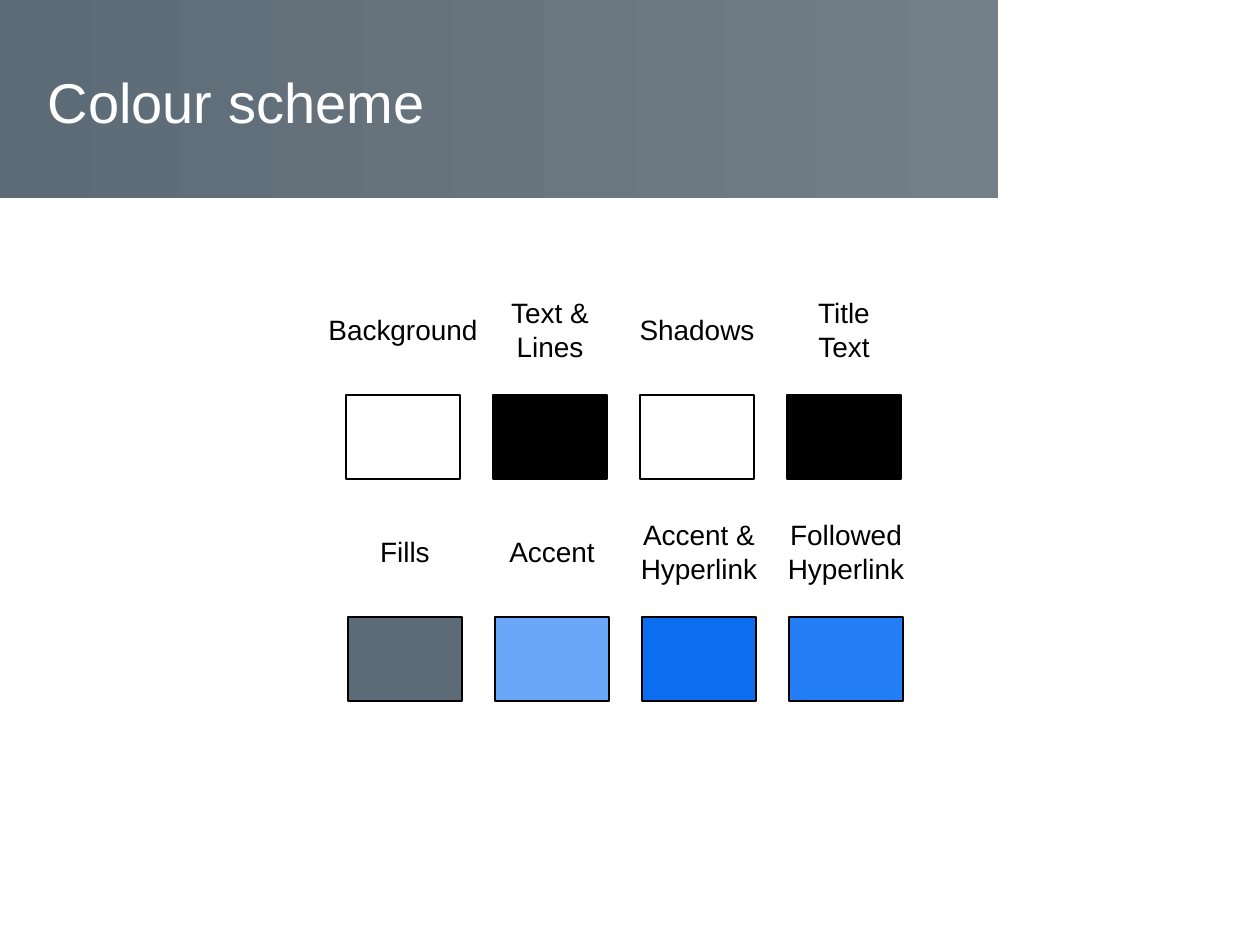
"""Builds the colour scheme slide: a title banner and two rows of labelled swatches."""
from pptx import Presentation
from pptx.dml.color import RGBColor
from pptx.enum.shapes import MSO_SHAPE
from pptx.enum.text import MSO_ANCHOR, MSO_AUTO_SIZE, PP_ALIGN
from pptx.util import Inches, Pt

RECTANGLE = MSO_SHAPE.RECTANGLE
MIDDLE = MSO_ANCHOR.MIDDLE
FIT_SHAPE = MSO_AUTO_SIZE.SHAPE_TO_FIT_TEXT
NO_AUTOFIT = MSO_AUTO_SIZE.NONE
LEFT, CENTER = PP_ALIGN.LEFT, PP_ALIGN.CENTER

FONT = "Arial"
WHITE = RGBColor(0xFF, 0xFF, 0xFF)
BLACK = RGBColor(0x00, 0x00, 0x00)
SLATE = RGBColor(0x5D, 0x6B, 0x76)
LIGHT_SLATE = RGBColor(0x73, 0x7F, 0x88)
SKY_BLUE = RGBColor(0x6B, 0xA7, 0xF8)
STRONG_BLUE = RGBColor(0x0B, 0x6D, 0xEF)
BRIGHT_BLUE = RGBColor(0x23, 0x7D, 0xF5)

PX_PER_INCH = 126
SWATCH_WIDTH, SWATCH_HEIGHT, SWATCH_PITCH = 114, 84, 147
LABEL_RISE = 66
LABEL_HEIGHTS = {1: 47, 2: 81}

ROWS = [
    (346, 395, [("Background", 176, WHITE), ("Text &\nLines", 108, BLACK),
                ("Shadows", 142, WHITE), ("Title\vText", 82, BLACK)]),
    (348, 617, [("Fills", 78, SLATE), ("Accent", 114, SKY_BLUE),
                ("Accent &\nHyperlink", 146, STRONG_BLUE),
                ("Followed\nHyperlink", 146, BRIGHT_BLUE)]),
]


def px(*lengths):
    return [Inches(length / PX_PER_INCH) for length in lengths]


def set_text(text_frame, text, size, color, alignment):
    text_frame.text = text
    text_frame.vertical_anchor = MIDDLE
    for paragraph in text_frame.paragraphs:
        paragraph.alignment = alignment
        for run in paragraph.runs:
            run.font.name = FONT
            run.font.size = Pt(size)
            run.font.color.rgb = color


def add_banner(slide):
    banner = slide.shapes.add_shape(RECTANGLE, *px(0, 0, 998, 198))
    banner.shadow.inherit = False
    banner.line.fill.background()
    banner.fill.gradient()
    banner.fill.gradient_angle = 0
    for stop, color in zip(banner.fill.gradient_stops, (SLATE, LIGHT_SLATE)):
        stop.color.rgb = color
    slide.shapes.element.insert(2, banner.element)


def set_title(slide, text):
    title = slide.shapes.title
    title.left, title.top, title.width, title.height = px(35, 38, 942, 127)
    title.text_frame.auto_size = NO_AUTOFIT
    set_text(title.text_frame, text, 32, WHITE, LEFT)


def add_swatch(slide, left, top, color):
    swatch = slide.shapes.add_shape(
        RECTANGLE, *px(left, top, SWATCH_WIDTH, SWATCH_HEIGHT))
    swatch.shadow.inherit = False
    swatch.fill.solid()
    swatch.fill.fore_color.rgb = color
    swatch.line.color.rgb = BLACK
    swatch.line.width = Pt(0.75)


def add_label(slide, center_x, center_y, width, text):
    height = LABEL_HEIGHTS[len(text.splitlines())]
    label = slide.shapes.add_textbox(
        *px(center_x - width / 2, center_y - height / 2, width, height))
    label.text_frame.word_wrap = False
    label.text_frame.auto_size = FIT_SHAPE
    set_text(label.text_frame, text, 16, BLACK, CENTER)


def main():
    presentation = Presentation()
    presentation.slide_width, presentation.slide_height = Inches(10), Inches(7.5)
    slide = presentation.slides.add_slide(presentation.slide_layouts[5])
    add_banner(slide)
    set_title(slide, "Colour scheme")
    for row_left, top, entries in ROWS:
        for column, (text, label_width, color) in enumerate(entries):
            left = row_left + column * SWATCH_PITCH
            add_swatch(slide, left, top, color)
            add_label(slide, left + SWATCH_WIDTH / 2, top - LABEL_RISE,
                      label_width, text)
    presentation.save("out.pptx")


if __name__ == "__main__":
    main()
